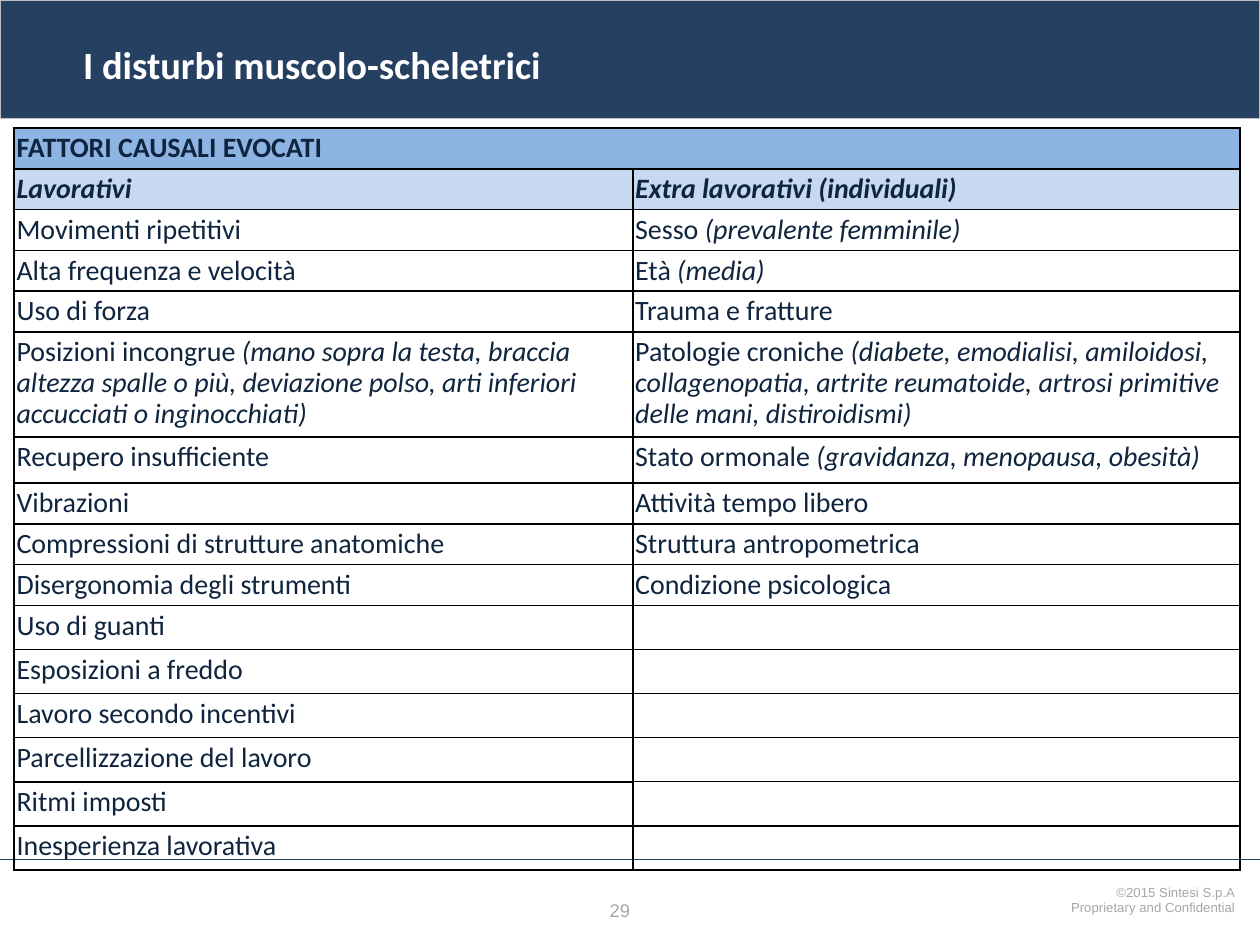
from typing import NamedTuple

from lxml.etree import SubElement as Sub
from pptx import Presentation
from pptx.dml.color import RGBColor as Rgb
from pptx.enum.shapes import MSO_CONNECTOR as Conn, MSO_SHAPE as Shape
from pptx.enum.text import MSO_ANCHOR as Anchor, MSO_AUTO_SIZE as Fit, PP_ALIGN as Align
from pptx.oxml import parse_xml
from pptx.oxml.ns import nsdecls, qn
from pptx.util import Pt

NAVY, INK, GREY, WHITE = "254061", "0F243E", "A6A6A6", "FFFFFF"
LINE, THICK, THIN = 1, 1.5, 0.75
COLS = (353.5, 347)


class Entry(NamedTuple):
    """Cell text, with an optional part in italics after it."""
    text: str = ""
    note: str = ""


class Row(NamedTuple):
    left: Entry
    right: Entry = Entry()
    high: float = 23.3
    fill: str = ""
    bold: bool = False


class Label(NamedTuple):
    lines: tuple[str, ...]
    box: tuple[float, float, float, float]
    size: float
    align: Align
    space: float


E = Entry
ROWS = [
    Row(E("FATTORI CAUSALI EVOCATI"), fill="8EB4E3", bold=True),
    Row(E("", "Lavorativi"), E("", "Extra lavorativi (individuali)"), fill="C6D9F1", bold=True),
    Row(E("Movimenti ripetitivi"), E("Sesso ", "(prevalente femminile)")),
    Row(E("Alta frequenza e velocità"), E("Età ", "(media)")),
    Row(E("Uso di forza"), E("Trauma e fratture")),
    Row(E("Posizioni incongrue ", "(mano sopra la testa, braccia altezza spalle o più, "
          "deviazione polso, arti inferiori accucciati o inginocchiati)"),
        E("Patologie croniche ", "(diabete, emodialisi, amiloidosi, collagenopatia, "
          "artrite reumatoide, artrosi primitive delle mani, distiroidismi)"), 60),
    Row(E("Recupero insufficiente"),
        E("Stato ormonale ", "(gravidanza, menopausa, obesità)"), 26.5),
    Row(E("Vibrazioni"), E("Attività tempo libero")),
    Row(E("Compressioni di strutture anatomiche"), E("Struttura antropometrica")),
    Row(E("Disergonomia degli strumenti"), E("Condizione psicologica")),
    *(Row(E(text), high=25.2) for text in (
        "Uso di guanti", "Esposizioni a freddo", "Lavoro secondo incentivi",
        "Parcellizzazione del lavoro", "Ritmi imposti", "Inesperienza lavorativa")),
]
THIN_EDGES = (12, 13, 14)  # edges above these rows, right column

LABELS = [
    Label(("29",), (341.3, 510.5, 37.4, 20.2), 10.5, Align.LEFT, 1),
    Label(("©2015 Sintesi S.p.A", "Proprietary and Confidential"),
          (521.3, 502.6, 191.5, 24.5), 7.5, Align.RIGHT, 0.95),
]


def color(code: str) -> Rgb:
    return Rgb.from_string(code)


def style(font, name: str, size: float, code: str, bold: bool = False) -> None:
    font.name, font.size, font.bold = name, Pt(size), bold
    font.color.rgb = color(code)


def add_label(slide, label: Label) -> None:
    frame = slide.shapes.add_textbox(*map(Pt, label.box)).text_frame
    frame.word_wrap = True
    frame.text = "\n".join(label.lines)
    for par in frame.paragraphs:
        par.alignment, par.line_spacing = label.align, label.space
        style(par.runs[0].font, "Arial", label.size, GREY)


def add_frame(slide) -> None:
    """Title band, title and footer rule."""
    title = slide.shapes.title
    band = slide.shapes.add_shape(Shape.RECTANGLE, 0, 0, Pt(720), Pt(67.7))
    band.shadow.inherit = False
    band.fill.solid()
    band.fill.fore_color.rgb = color(NAVY)
    band.line.color.rgb = color("BFBFBF")
    band.line.width = Pt(0.75)
    title.element.addprevious(band.element)

    rule = slide.shapes.add_connector(Conn.STRAIGHT, 0, Pt(491), Pt(720), Pt(491))
    rule.line.color.rgb = color(NAVY)
    rule.line.width = Pt(0.5)
    Sub(rule.element.spPr, qn("a:effectLst"))

    title.left, title.top, title.width, title.height = map(Pt, (40.3, 13.7, 620.6, 46))
    frame = title.text_frame
    frame.text = "I disturbi muscolo-scheletrici"
    frame.auto_size, frame.vertical_anchor = Fit.NONE, Anchor.MIDDLE
    par = frame.paragraphs[0]
    par.alignment = Align.LEFT
    style(par.runs[0].font, "Calibri", 22, WHITE, True)


def set_edges(cell, widths: dict[str, float]) -> None:
    props = cell._tc.get_or_add_tcPr()
    for spot, (side, width) in enumerate(widths.items()):
        props.insert(spot, parse_xml(
            f'<a:ln{side} {nsdecls("a")} w="{Pt(width)}"><a:solidFill>'
            f'<a:srgbClr val="000000"/></a:solidFill></a:ln{side}>'))


def fill_cell(cell, entry: Entry, row: Row) -> None:
    if row.fill:
        cell.fill.solid()
        cell.fill.fore_color.rgb = color(row.fill)
    else:
        cell.fill.background()
    cell.margin_left = cell.margin_right = Pt(1.4)
    cell.margin_top = cell.margin_bottom = Pt(2.9 if any(entry) else 0)
    par = cell.text_frame.paragraphs[0]
    par.line_spacing = 0.9
    for text, slant in zip(entry, (False, True)):
        if text:
            run = par.add_run()
            run.text = text
            style(run.font, "Calibri", 16, INK, row.bold)
            run.font.italic = slant


def add_causes(slide) -> None:
    last = len(ROWS) - 1
    table = slide.shapes.add_table(
        len(ROWS), 2, Pt(8.1), Pt(73.3), Pt(sum(COLS)),
        Pt(sum(row.high for row in ROWS))).table
    table.first_row = table.horz_banding = False
    for col, width in zip(table.columns, COLS):
        col.width = Pt(width)
    table.cell(0, 0).merge(table.cell(0, 1))
    table.cell(0, 0).vertical_anchor = Anchor.MIDDLE

    def edge(num: int, col: int) -> float:
        """Width of the edge above row num."""
        if num in (0, last + 1):
            return THICK
        return THIN if col and num in THIN_EDGES else LINE

    for num, row in enumerate(ROWS):
        table.rows[num].height = Pt(row.high)
        for col, entry in enumerate((row.left, row.right)):
            cell = table.cell(num, col)
            fill_cell(cell, entry, row)
            set_edges(cell, {
                "L": LINE if col else THICK,
                "R": THICK if col or cell.is_merge_origin else LINE,
                "T": edge(num, col),
                "B": edge(num + 1, col)})


def main() -> None:
    deck = Presentation()
    deck.slide_width, deck.slide_height = Pt(720), Pt(540)
    slide = deck.slides.add_slide(deck.slide_layouts.get_by_name("Title Only"))
    add_frame(slide)
    for label in LABELS:
        add_label(slide, label)
    add_causes(slide)
    deck.save("out.pptx")


if __name__ == "__main__":
    main()
